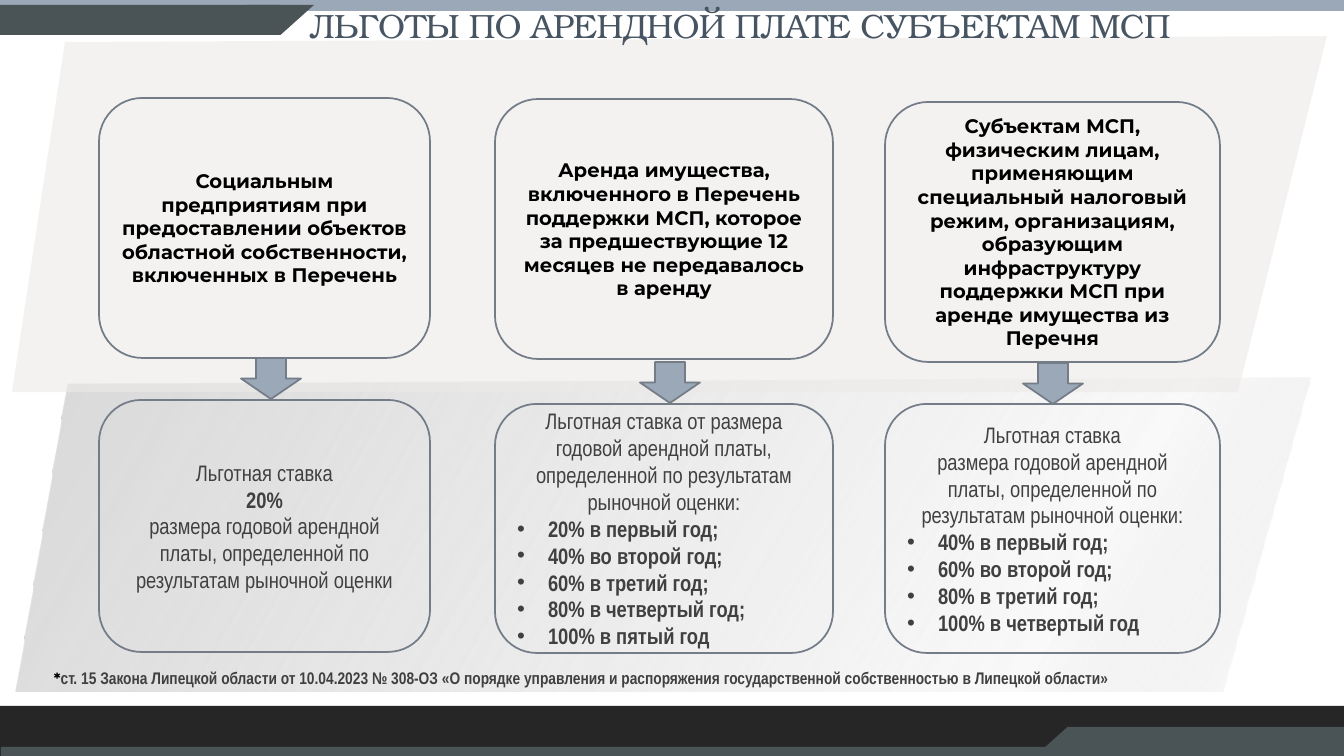
from lxml import etree
from pptx import Presentation
from pptx.dml.color import RGBColor
from pptx.enum.shapes import MSO_SHAPE
from pptx.enum.text import MSO_ANCHOR, PP_ALIGN
from pptx.oxml import parse_xml
from pptx.oxml.ns import nsdecls, qn
from pptx.util import Pt

RECT, ROUNDED = MSO_SHAPE.RECTANGLE, MSO_SHAPE.ROUNDED_RECTANGLE
MERGE, ARROW = MSO_SHAPE.FLOWCHART_MERGE, MSO_SHAPE.DOWN_ARROW
LEFT, CENTER = PP_ALIGN.LEFT, PP_ALIGN.CENTER

BLACK = RGBColor(0x00, 0x00, 0x00)
WHITE = RGBColor(0xFF, 0xFF, 0xFF)
CHARCOAL = RGBColor(0x26, 0x26, 0x26)
SLATE = RGBColor(0x4A, 0x53, 0x56)
BLUE_GREY = RGBColor(0x9B, 0xA8, 0xB7)
OUTLINE = RGBColor(0x73, 0x7C, 0x87)
TITLE_COLOR = RGBColor(0x47, 0x54, 0x62)
BODY_COLOR = RGBColor(0x40, 0x40, 0x40)
PANEL = RGBColor(0xEC, 0xEA, 0xE8)

HEADING_FONT, BODY_FONT, TITLE_FONT = "Montserrat", "Arial Narrow", "TeX Gyre Bonum"

# Content; all lengths are px
WIDTH, HEIGHT = 1344, 756
EMU_PER_PX = 12192000 / WIDTH

TITLE = "ЛЬГОТЫ ПО АРЕНДНОЙ ПЛАТЕ СУБЪЕКТАМ МСП"
FOOTNOTE = ("ст. 15 Закона Липецкой области от 10.04.2023 № 308-ОЗ «О порядке управления "
            "и распоряжения государственной собственностью в Липецкой области»")

# shape kind, (left, top, width, height), fill, rotation
DECORATION = [
    (RECT, (0, 706, 1344, 50), CHARCOAL, 0),
    (RECT, (0, 0, 1344, 11), BLUE_GREY, 0),
    (RECT, (1, 747, 1344, 11), SLATE, 0),
    (RECT, (0, 5, 280, 30), SLATE, 0),
    (MERGE, (247, 5, 67, 30), SLATE, 0),
    (RECT, (1067, 727, 280, 30), SLATE, 0),
    (MERGE, (1034, 727, 67, 30), SLATE, 180),
    (RECT, (34, 157, 1270, 118), WHITE, 0),
]
LOWER_PANEL = [(16, 692), (68, 384), (1311, 378), (1223, 692)]
UPPER_PANEL = [(12, 392), (65, 42), (1327, 36), (1238, 392)]

COLUMNS = [
    {"left": 99, "width": 331, "condition_top": 98, "rate_top": 400, "rate_height": 252,
     "arrow": (241, 358),
     "condition": "Социальным предприятиям при предоставлении объектов областной "
                  "собственности, включенных в Перечень",
     "rate": [("Льготная ставка", False), ("20%", True),
              ("размера годовой арендной платы, определенной по результатам "
               "рыночной оценки", False)],
     "years": []},
    {"left": 495, "width": 338, "condition_top": 99, "rate_top": 404, "rate_height": 249,
     "arrow": (640, 362),
     "condition": "Аренда имущества, включенного в Перечень поддержки МСП, которое за "
                  "предшествующие 12 месяцев не передавалось в аренду",
     "rate": [("Льготная ставка от размера годовой арендной платы, определенной по "
               "результатам рыночной оценки:", False)],
     "years": ["20% в первый год;", "40% во второй год;", "60% в третий год;",
               "80% в четвертый год;", "100% в пятый год"]},
    {"left": 885, "width": 335, "condition_top": 102, "rate_top": 404, "rate_height": 249,
     "arrow": (1023, 363),
     "condition": "Субъектам МСП, физическим лицам, применяющим специальный налоговый "
                  "режим, организациям, образующим инфраструктуру поддержки МСП при "
                  "аренде имущества из Перечня",
     "rate": [("Льготная ставка", False),
              ("размера годовой арендной платы, определенной по результатам "
               "рыночной оценки:", False)],
     "years": ["40% в первый год;", "60% во второй год;", "80% в третий год;",
               "100% в четвертый год"]},
]
CONDITION_HEIGHT = 260
ARROW_SIZE = (60, 41)
BULLET_INDENT = 31


def px(value):
    return round(value * EMU_PER_PX)


def style_shape(shape, fill=None, outline=None):
    shape.shadow.inherit = False
    if fill is None:
        shape.fill.background()
    else:
        shape.fill.solid()
        shape.fill.fore_color.rgb = fill
    if outline is None:
        shape.line.fill.background()
    else:
        shape.line.color.rgb = outline
        shape.line.width = Pt(1.25)


def add_shape(slide, kind, box, fill=None, outline=None):
    shape = slide.shapes.add_shape(kind, *map(px, box))
    style_shape(shape, fill, outline)
    return shape


def add_panel(slide, points, fill):
    builder = slide.shapes.build_freeform(*points[0], scale=EMU_PER_PX)
    builder.add_line_segments(points[1:], close=True)
    panel = builder.convert_to_shape()
    style_shape(panel, fill)
    return panel


def set_font(font, name, size, color, bold=False):
    font.name, font.size, font.bold = name, Pt(size), bold
    font.color.rgb = color


def add_bullet(paragraph):
    properties = paragraph._p.get_or_add_pPr()
    properties.set("marL", str(px(BULLET_INDENT)))
    properties.set("indent", str(-px(BULLET_INDENT)))
    etree.SubElement(properties, qn("a:buFont")).set("typeface", "Arial")
    etree.SubElement(properties, qn("a:buChar")).set("char", "•")


def fill_box(shape, lines, font_name, size, color):
    """Each line is (text, bold, bulleted)."""
    frame = shape.text_frame
    frame.word_wrap = True
    frame.vertical_anchor = MSO_ANCHOR.MIDDLE
    for index, (text, bold, bulleted) in enumerate(lines):
        paragraph = frame.add_paragraph() if index else frame.paragraphs[0]
        paragraph.text = text
        paragraph.alignment = LEFT if bulleted else CENTER
        if bulleted:
            add_bullet(paragraph)
        set_font(paragraph.font, font_name, size, color, bold)


def add_text_box(slide, box):
    frame = slide.shapes.add_textbox(*map(px, box)).text_frame
    frame.word_wrap = True
    return frame


def main():
    presentation = Presentation()
    presentation.slide_width, presentation.slide_height = px(WIDTH), px(HEIGHT)
    slide = presentation.slides.add_slide(presentation.slide_layouts[6])

    # Bars and background panels
    for kind, box, fill, rotation in DECORATION:
        add_shape(slide, kind, box, fill).rotation = rotation

    lower = add_panel(slide, LOWER_PANEL, WHITE)
    solid = lower._element.spPr.find(qn("a:solidFill"))
    solid.getparent().replace(solid, parse_xml(
        f'<a:gradFill {nsdecls("a")} rotWithShape="1"><a:gsLst>'
        '<a:gs pos="0"><a:srgbClr val="FFFFFF"/></a:gs>'
        '<a:gs pos="20000"><a:srgbClr val="D9D9D9"><a:alpha val="15000"/></a:srgbClr></a:gs>'
        '<a:gs pos="100000"><a:srgbClr val="D9D9D9"/></a:gs>'
        '</a:gsLst><a:lin ang="12600000" scaled="0"/></a:gradFill>'))

    upper = add_panel(slide, UPPER_PANEL, PANEL)
    color = upper._element.spPr.find(qn("a:solidFill"))[0]
    etree.SubElement(color, qn("a:alpha")).set("val", "60000")

    # Title
    frame = add_text_box(slide, (300, -4, 1097, 55))
    frame.vertical_anchor = MSO_ANCHOR.BOTTOM
    paragraph = frame.paragraphs[0]
    paragraph.line_spacing = 0.9
    run = paragraph.add_run()
    run.text = TITLE
    set_font(run.font, TITLE_FONT, 24, TITLE_COLOR)
    run._r.get_or_add_rPr().set("spc", "-50")

    # Columns: condition, rate and the arrow between them
    for column in COLUMNS:
        left, width = column["left"], column["width"]
        condition = add_shape(slide, ROUNDED, (left, column["condition_top"], width,
                                               CONDITION_HEIGHT), outline=OUTLINE)
        fill_box(condition, [(column["condition"], True, False)], HEADING_FONT, 14, BLACK)
        rate = add_shape(slide, ROUNDED, (left, column["rate_top"], width,
                                          column["rate_height"]), outline=OUTLINE)
        lines = [(text, bold, False) for text, bold in column["rate"]]
        lines += [(text, True, True) for text in column["years"]]
        fill_box(rate, lines, BODY_FONT, 16, BODY_COLOR)
        add_shape(slide, ARROW, column["arrow"] + ARROW_SIZE, BLUE_GREY, OUTLINE)

    # Footnote
    paragraph = add_text_box(slide, (44, 663, 1150, 30)).paragraphs[0]
    for text, font_name, size, color in [("*", HEADING_FONT, 11, BLACK),
                                         (FOOTNOTE, BODY_FONT, 12, BODY_COLOR)]:
        run = paragraph.add_run()
        run.text = text
        set_font(run.font, font_name, size, color, bold=True)

    presentation.save("out.pptx")


if __name__ == "__main__":
    main()
